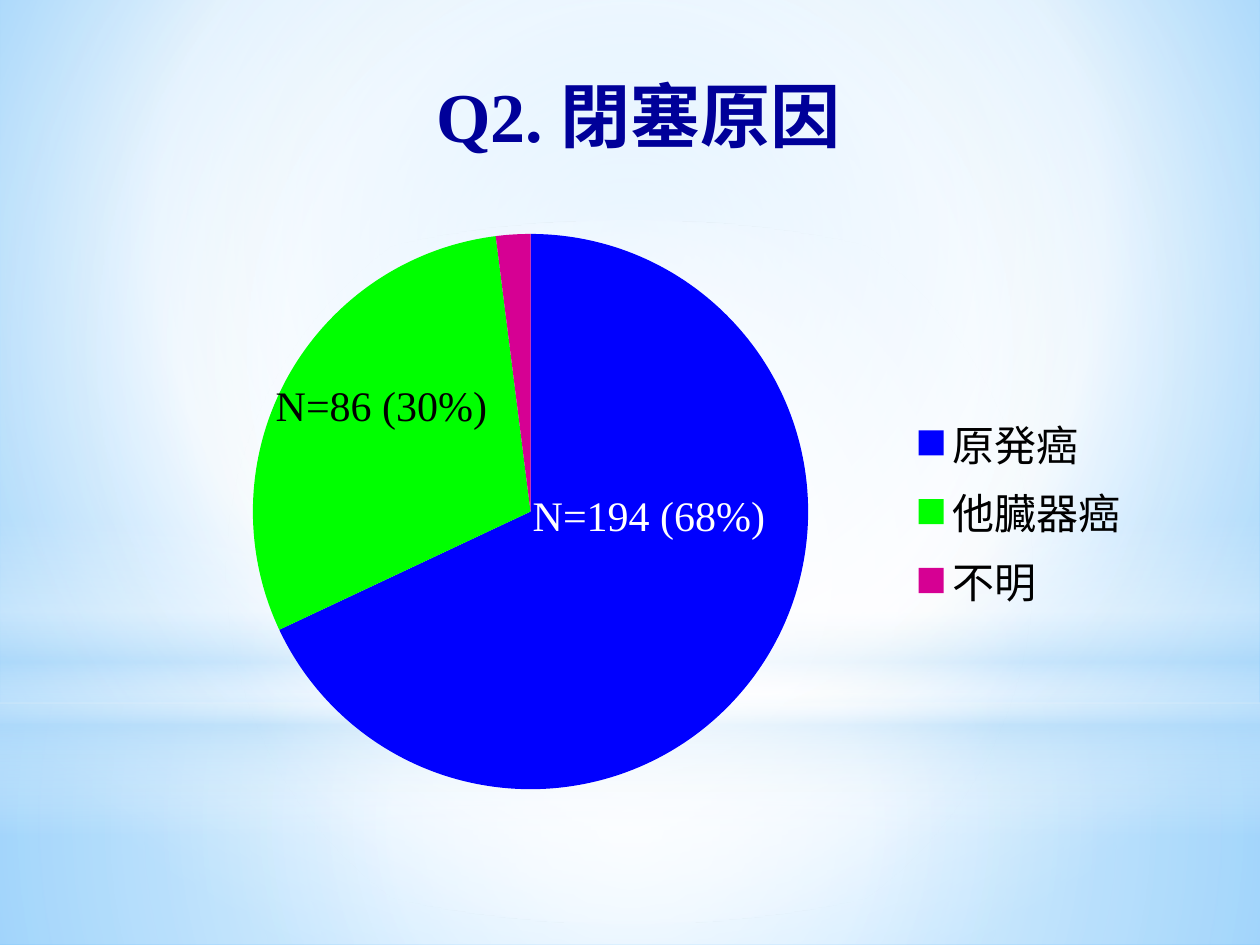
from lxml.etree import SubElement
from pptx import Presentation
from pptx.chart.data import CategoryChartData
from pptx.dml.color import RGBColor
from pptx.enum.chart import XL_CHART_TYPE, XL_LEGEND_POSITION
from pptx.enum.shapes import MSO_SHAPE
from pptx.enum.text import PP_ALIGN
from pptx.oxml import parse_xml
from pptx.oxml.ns import nsdecls, qn
from pptx.util import Inches, Pt

WIDTH, HEIGHT = Inches(10), Inches(7.5)
NAVY = RGBColor(0x00, 0x00, 0x99)
BLUE = RGBColor(0x00, 0x00, 0xFF)
GREEN = RGBColor(0x00, 0xFF, 0x00)
MAGENTA = RGBColor(0xD6, 0x00, 0x93)
WHITE = RGBColor(0xFF, 0xFF, 0xFF)
BLACK = RGBColor(0x00, 0x00, 0x00)
PALE = RGBColor(0xB4, 0xDC, 0xFA)
SKY = RGBColor(0x9E, 0xD5, 0xFF)
DEEP_SKY = RGBColor(0x5B, 0xB9, 0xFF)
SERIF = "Times New Roman"
CENTRE = (50, 50, 50, 50)
CAUSES = [("原発癌", 68, BLUE), ("他臓器癌", 30, GREEN), ("不明", 2, MAGENTA)]


def share(left, top, width, height):
    """Turn shares of the slide's size into lengths."""
    return (int(left * WIDTH), int(top * HEIGHT),
            int(width * WIDTH), int(height * HEIGHT))


def paint_gradient(fill, owner, stops, focus=None):
    """Fill with (position, colour, opacity) stops, circular around a focus or downward."""
    fill.gradient()
    stop_xml = "".join(
        f'<a:gs pos="{position * 1000}"><a:srgbClr val="{colour}">'
        f'<a:alpha val="{opacity * 1000}"/></a:srgbClr></a:gs>'
        for position, colour, opacity in stops)
    if focus:
        sides = " ".join(f'{side}="{value * 1000}"' for side, value in zip("ltrb", focus))
        shading = f'<a:path path="circle"><a:fillToRect {sides}/></a:path>'
    else:
        shading = '<a:lin ang="5400000" scaled="0"/>'
    gradient = parse_xml(f'<a:gradFill {nsdecls("a")} rotWithShape="1">'
                         f'<a:gsLst>{stop_xml}</a:gsLst>{shading}</a:gradFill>')
    plain = owner.find(".//" + qn("a:gradFill"))
    plain.getparent().replace(plain, gradient)


def add_glow(slide, kind, area, stops, focus=None):
    """Add one borderless gradient layer of the backdrop."""
    glow = slide.shapes.add_shape(kind, *share(*area))
    glow.shadow.inherit = False
    glow.line.fill.background()
    paint_gradient(glow.fill, glow.element, stops, focus)


def add_backdrop(slide):
    """Paint the sky background and its light layers."""
    paint_gradient(slide.background.fill, slide.element,
                   [(0, SKY, 100), (60, WHITE, 100), (100, DEEP_SKY, 100)],
                   (20, 10, 20, 60))
    horizon = 0.744
    add_glow(slide, MSO_SHAPE.RECTANGLE, (0, horizon, 1, 1 - horizon),
             [(0, WHITE, 91), (37, WHITE, 76), (100, PALE, 79)], CENTRE)
    add_glow(slide, MSO_SHAPE.RECTANGLE, (0, 0, 1, horizon),
             [(0, WHITE, 89), (48, WHITE, 62), (100, PALE, 79)], CENTRE)
    add_glow(slide, MSO_SHAPE.RECTANGLE, (0, 0.55, 1, 0.333),
             [(0, WHITE, 0), (29, WHITE, 30), (45, PALE, 40),
              (55, WHITE, 26), (65, PALE, 60), (100, WHITE, 0)])
    add_glow(slide, MSO_SHAPE.OVAL, (0, 0.233, 1, horizon),
             [(0, WHITE, 100), (56, WHITE, 0)], CENTRE)


def add_text(slide, area, text, size, colour, wrap=False):
    """Add a one-paragraph serif text box and return its paragraph."""
    frame = slide.shapes.add_textbox(*share(*area)).text_frame
    frame.word_wrap = wrap
    paragraph = frame.paragraphs[0]
    paragraph.text = text
    paragraph.font.name = SERIF
    paragraph.font.size = Pt(size)
    paragraph.font.color.rgb = colour
    return paragraph


def place_plot(chart, **shares):
    """Fix the pie's area as shares of the chart's size."""
    plot_area = chart.element.find(".//" + qn("c:plotArea"))
    for old_layout in plot_area.findall(qn("c:layout")):
        plot_area.remove(old_layout)
    layout = parse_xml(f'<c:layout {nsdecls("c")}/>')
    plot_area.insert(0, layout)
    manual = SubElement(layout, qn("c:manualLayout"))
    settings = {"layoutTarget": "inner", "xMode": "edge", "yMode": "edge", **shares}
    for tag, value in settings.items():
        SubElement(manual, qn(f"c:{tag}")).set("val", str(value))


def add_cause_pie(slide, area):
    """Add the pie of causes with its legend on the right."""
    names, values, colours = zip(*CAUSES)
    causes = CategoryChartData()
    causes.categories = names
    causes.add_series("Series 1", values)
    chart = slide.shapes.add_chart(XL_CHART_TYPE.PIE, *share(*area), causes).chart
    chart.has_title = False
    chart.font.name = "Roboto"
    chart.font.size = Pt(10)
    chart.font.color.rgb = BLACK
    chart.has_legend = True
    chart.legend.position = XL_LEGEND_POSITION.RIGHT
    chart.legend.include_in_layout = False
    chart.legend.font.name = "Noto Sans CJK JP"
    chart.legend.font.size = Pt(24)
    chart.legend.font.color.rgb = BLACK
    pie = chart.plots[0]
    pie.vary_by_categories = True
    for index, colour in enumerate(colours):
        slice_format = pie.series[0].points[index].format
        slice_format.fill.solid()
        slice_format.fill.fore_color.rgb = colour
        slice_format.line.fill.background()
    place_plot(chart, x=0.1, y=0.03, w=0.56, h=0.94)


def main():
    """Build and save the slide."""
    deck = Presentation()
    deck.slide_width, deck.slide_height = WIDTH, HEIGHT
    slide = deck.slides.add_slide(deck.slide_layouts[6])
    add_backdrop(slide)
    title = add_text(slide, (0.334, 0.057, 0.345, 0.107), "Q2. 閉塞原因", 40, NAVY, wrap=True)
    title.alignment = PP_ALIGN.CENTER
    title.line_spacing = Pt(55)
    title.font.bold = True
    add_cause_pie(slide, (0.122, 0.227, 0.787, 0.629))
    add_text(slide, (0.413, 0.511, 0.207, 0.067), "N=194 (68%)", 24, WHITE)
    add_text(slide, (0.209, 0.395, 0.19, 0.067), "N=86 (30%)", 24, BLACK)
    deck.save("out.pptx")


if __name__ == "__main__":
    main()
